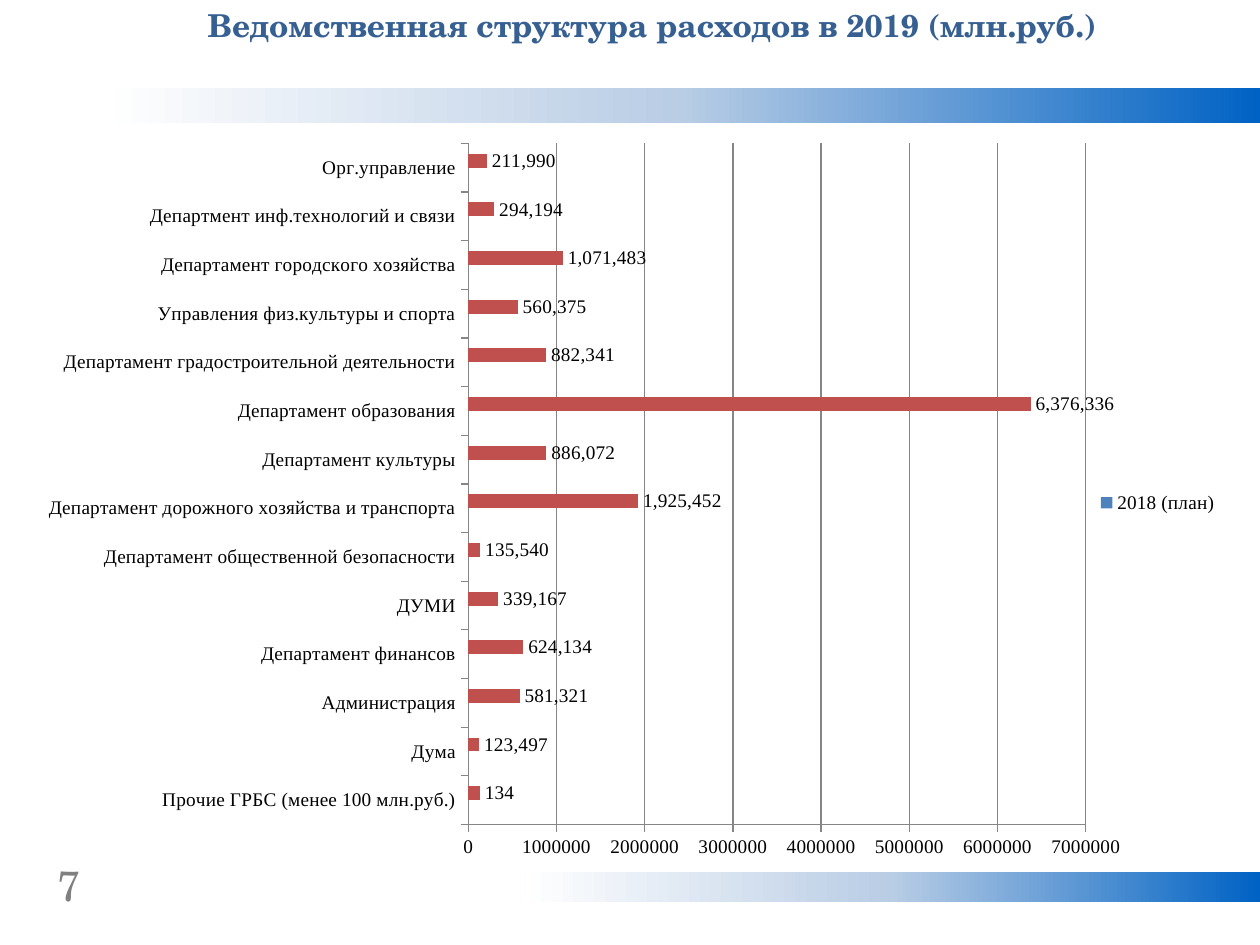
from copy import deepcopy

from lxml import etree
from pptx import Presentation
from pptx.chart.data import CategoryChartData
from pptx.dml.color import RGBColor
from pptx.enum.chart import XL_CHART_TYPE as CT, XL_LABEL_POSITION as LP
from pptx.enum.chart import XL_LEGEND_POSITION as LEG, XL_TICK_MARK as TICK
from pptx.enum.text import MSO_AUTO_SIZE as AUTO, PP_ALIGN as AL
from pptx.oxml.ns import qn
from pptx.util import Cm, Pt

TITLE_BLUE = RGBColor(0x37, 0x60, 0x92)
DEEP_BLUE = RGBColor(0x00, 0x62, 0xC4)
PALE_BLUE = RGBColor(0xB9, 0xCD, 0xE5)
WHITE = RGBColor(0xFF, 0xFF, 0xFF)
GREY = RGBColor(0x80, 0x80, 0x80)
LINE_GREY = RGBColor(0x86, 0x86, 0x86)
BLACK = RGBColor(0, 0, 0)
BAR_BLUE = RGBColor(0x4F, 0x81, 0xBD)
BAR_RED = RGBColor(0xC0, 0x50, 0x4D)
HEAD_FONT = "TeX Gyre Schola"
CHART_FONT = {"name": "Times New Roman", "size": Pt(11)}


def set_font(font, fmt, color):
    for name, value in fmt.items():
        setattr(font, name, value)
    font.color.rgb = color


prs = Presentation()
prs.slide_width, prs.slide_height = Cm(25.4), Cm(19.05)
s = prs.slides.add_slide(prs.slide_layouts[6])

# Gradient bands, both reaching the right edge
for left, top, height in [(2.0, 1.78, 0.71), (10.49, 17.58, 0.6)]:
    sp = s.shapes.add_shape(1, Cm(left), Cm(top), Cm(25.4 - left), Cm(height))
    sp.shadow.inherit = False
    sp.line.fill.background()
    sp.fill.gradient()
    sp.fill.gradient_angle = 180
    stops = sp._element.spPr.find(".//" + qn("a:gsLst"))
    stops.insert(1, deepcopy(stops[0]))
    for stop, pos, color in zip(sp.fill.gradient_stops, (0, 0.5, 1),
                                (DEEP_BLUE, PALE_BLUE, WHITE)):
        stop.position = pos
        stop.color.rgb = color

# Title and page number
texts = [
    ("Ведомственная структура расходов в 2019 (млн.руб.)",
     (2.39, 0, 21.51, 1.02), AL.CENTER, {"size": Pt(18), "bold": True}, TITLE_BLUE),
    ("7", (0.91, 17.2, 1.78, 1.27), AL.LEFT, {"size": Pt(24)}, GREY),
]
for text, box, align, fmt, color in texts:
    tf = s.shapes.add_textbox(*map(Cm, box)).text_frame
    tf.word_wrap = True
    tf.auto_size = AUTO.SHAPE_TO_FIT_TEXT
    p = tf.paragraphs[0]
    p.alignment = align
    r = p.add_run()
    r.text = text
    set_font(r.font, {"name": HEAD_FONT, **fmt}, color)

# Chart data, from the bottom bar up
spending = [
    ("Прочие ГРБС (менее 100 млн.руб.)", 131321),
    ("Дума", 123497),
    ("Администрация", 581321),
    ("Департамент финансов", 624134),
    ("ДУМИ", 339167),
    ("Департамент общественной безопасности", 135540),
    ("Департамент дорожного хозяйства и транспорта", 1925452),
    ("Департамент культуры", 886072),
    ("Департамент образования", 6376336),
    ("Департамент градостроительной деятельности", 882341),
    ("Управления физ.культуры и спорта", 560375),
    ("Департамент городского хозяйства", 1071483),
    ("Департмент инф.технологий и связи", 294194),
    ("Орг.управление", 211990),
]
data = CategoryChartData()
data.categories = [name for name, _ in spending]
data.add_series("2018 (план)", [None] * len(spending))
data.add_series("2 019", [value for _, value in spending])
chart = s.shapes.add_chart(CT.BAR_CLUSTERED, Cm(0.41), Cm(2.59), Cm(24.41),
                           Cm(15.09), data).chart
chart.has_title = False
set_font(chart.font, CHART_FONT, BLACK)

# Bars and value labels
plot = chart.plots[0]
plot.gap_width, plot.overlap = 150, 0
plot.vary_by_categories = False
for ser, color in zip(plot.series, (BAR_BLUE, BAR_RED)):
    ser.format.fill.solid()
    ser.format.fill.fore_color.rgb = color
    ser.invert_if_negative = False
    labels = ser.data_labels
    for name, value in {"show_value": True, "number_format": "#,##0",
                        "number_format_is_linked": False,
                        "position": LP.OUTSIDE_END}.items():
        setattr(labels, name, value)
    set_font(labels.font, CHART_FONT, BLACK)
label = plot.series[1].points[0].data_label
r = label.text_frame.paragraphs[0].add_run()
r.text = "134"
set_font(r.font, CHART_FONT, BLACK)
label.position = LP.OUTSIDE_END

# Axes and gridlines
cat, val = chart.category_axis, chart.value_axis
for name, value in {"minimum_scale": 0, "maximum_scale": 7000000,
                    "major_unit": 1000000, "has_major_gridlines": True}.items():
    setattr(val, name, value)
val.tick_labels.number_format = "0"
val.tick_labels.number_format_is_linked = False
for axis in (cat, val):
    axis.major_tick_mark = TICK.OUTSIDE
    set_font(axis.tick_labels.font, CHART_FONT, BLACK)
for part in (cat, val, val.major_gridlines):
    part.format.line.color.rgb = LINE_GREY
    part.format.line.width = Pt(0.75)

# Legend without the empty series
chart.has_legend = True
legend = chart.legend
legend.position = LEG.RIGHT
legend.include_in_layout = False
set_font(legend.font, CHART_FONT, BLACK)
entry = etree.Element(qn("c:legendEntry"))
for tag, value in (("c:idx", "0"), ("c:delete", "1")):
    etree.SubElement(entry, qn(tag)).set("val", value)
legend._element.find(qn("c:legendPos")).addnext(entry)

# Plot area position, as shares of the chart
area = chart._chartSpace.find(".//" + qn("c:plotArea"))
for old in area.findall(qn("c:layout")):
    area.remove(old)
layout = etree.Element(qn("c:layout"))
manual = etree.SubElement(layout, qn("c:manualLayout"))
for tag, value in {"layoutTarget": "inner", "xMode": "edge", "yMode": "edge",
                   "x": 0.37, "y": 0.02, "w": 0.51, "h": 0.91}.items():
    etree.SubElement(manual, qn("c:" + tag)).set("val", str(value))
area.insert(0, layout)

prs.save("out.pptx")
